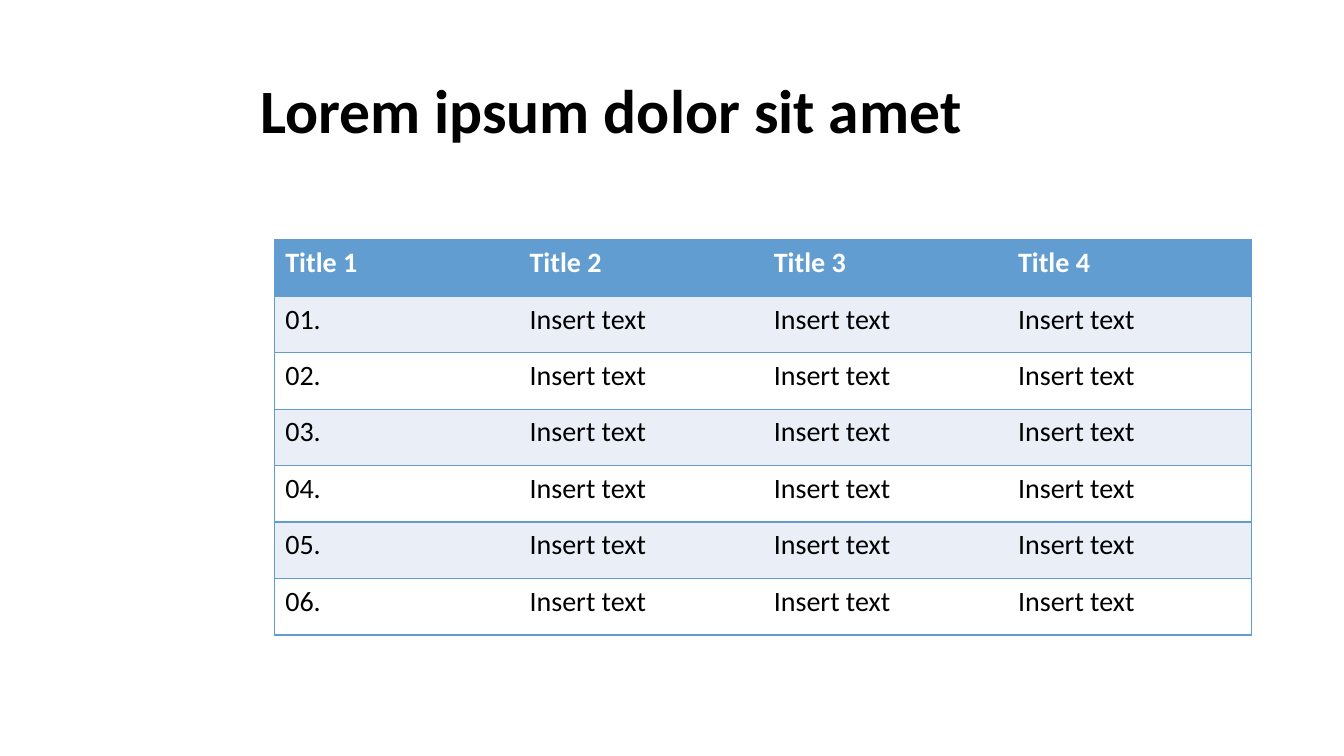
from lxml import etree
from pptx import Presentation
from pptx.dml.color import RGBColor
from pptx.enum.text import MSO_ANCHOR, PP_ALIGN
from pptx.oxml.ns import qn
from pptx.util import Inches, Pt

LEFT = PP_ALIGN.LEFT
MIDDLE = MSO_ANCHOR.MIDDLE
TITLE_ONLY = 5
FONT = "Calibri"
COLORS = {"accent": "629DD1", "band": "EAEFF7", "paper": "FFFFFF", "ink": "000000"}
TITLE_BOX = (2.48, 0.4, 10.73, 1.45)
TABLE_BOX = (2.72, 2.38, 9.69, 3.92)
COLUMNS = 4
ENTRIES = 6


def color(name):
    return RGBColor.from_string(COLORS[name])


def write(frame, text, size=20, ink="ink", bold=False, spacing=1.0):
    paragraph = frame.paragraphs[0]
    paragraph.alignment = LEFT
    paragraph.line_spacing = spacing
    run = paragraph.add_run()
    run.text = text
    run.font.name = FONT
    run.font.size = Pt(size)
    run.font.bold = bold
    run.font.color.rgb = color(ink)


def set_borders(cell, visible):
    properties = cell._tc.get_or_add_tcPr()
    for side in "LRTB":
        line = etree.SubElement(properties, qn(f"a:ln{side}"), w=str(Pt(1)))
        if side in visible:
            fill = etree.SubElement(line, qn("a:solidFill"))
            etree.SubElement(fill, qn("a:srgbClr"), val=COLORS["accent"])
        else:
            etree.SubElement(line, qn("a:noFill"))


def add_heading(slide, box, text):
    heading = slide.shapes.title
    heading.left, heading.top, heading.width, heading.height = map(Inches, box)
    heading.text_frame.vertical_anchor = MIDDLE
    write(heading.text_frame, text, size=44, bold=True, spacing=0.9)


def add_entries(slide, box, rows):
    left, top, width, height = map(Inches, box)
    table = slide.shapes.add_table(len(rows), COLUMNS, left, top, width, height).table
    table.horz_banding = False
    for r, texts in enumerate(rows):
        header = r == 0
        fill = "accent" if header else ("band" if r % 2 else "paper")
        for c, text in enumerate(texts):
            cell = table.cell(r, c)
            cell.margin_left = cell.margin_right = Inches(0.11)
            cell.margin_top = cell.margin_bottom = Inches(0.06)
            edge = {0: "L", COLUMNS - 1: "R"}.get(c, "")
            set_borders(cell, "TB" + edge)
            cell.fill.solid()
            cell.fill.fore_color.rgb = color(fill)
            write(cell.text_frame, text, ink="paper" if header else "ink", bold=header)


def main():
    deck = Presentation()
    deck.slide_width, deck.slide_height = Inches(13.33), Inches(7.5)
    slide = deck.slides.add_slide(deck.slide_layouts[TITLE_ONLY])
    add_heading(slide, TITLE_BOX, "Lorem ipsum dolor sit amet")
    titles = [f"Title {n}" for n in range(1, COLUMNS + 1)]
    entries = [[f"{n:02}."] + ["Insert text"] * (COLUMNS - 1) for n in range(1, ENTRIES + 1)]
    add_entries(slide, TABLE_BOX, [titles] + entries)
    deck.save("out.pptx")


if __name__ == "__main__":
    main()
